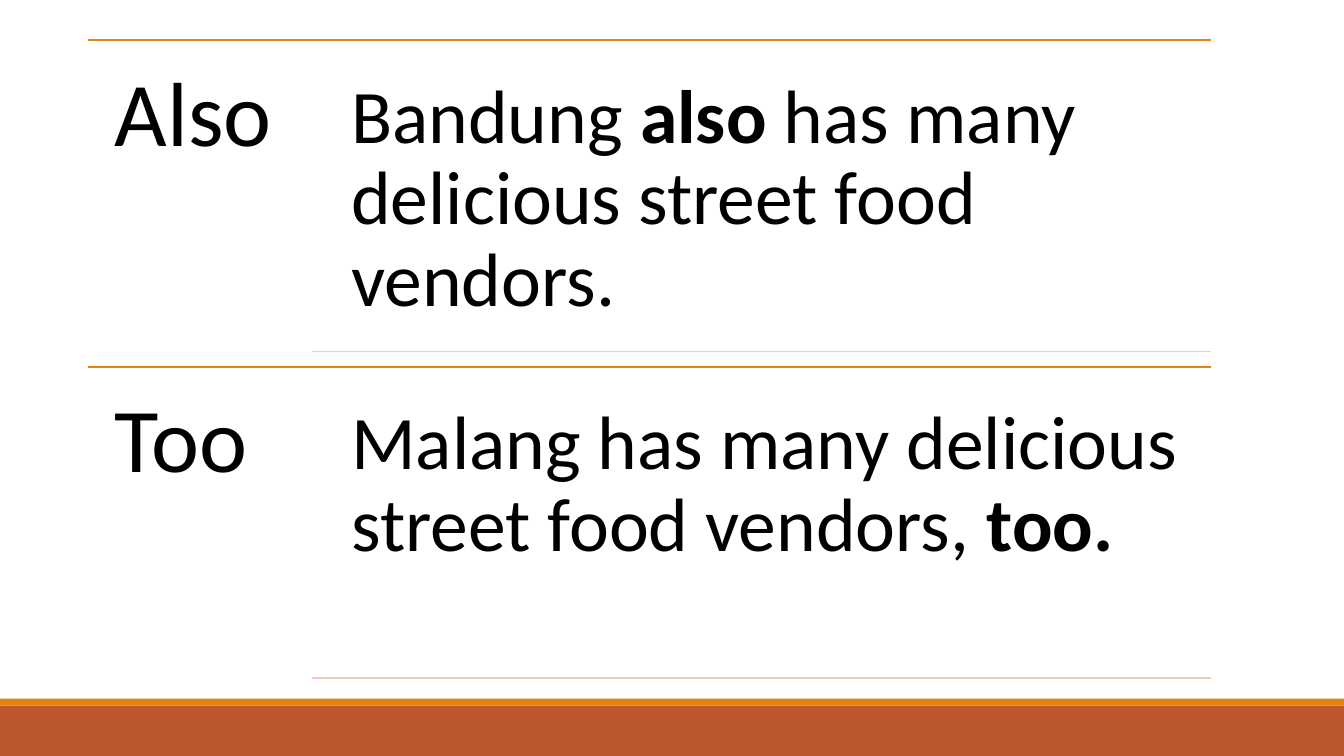
from dataclasses import dataclass

from lxml.etree import SubElement
from pptx import Presentation
from pptx.dml.color import RGBColor
from pptx.enum.shapes import MSO_CONNECTOR, MSO_SHAPE
from pptx.enum.text import MSO_ANCHOR
from pptx.oxml.ns import qn
from pptx.util import Pt


@dataclass(frozen=True)
class Theme:
    font: str = "Calibri"
    text: str = "000000"
    orange: str = "E48312"
    rust: str = "BD582C"
    pale: str = "F2CDBD"
    word_size: float = 65
    example_size: float = 54
    rule_width: float = 1.25


theme = Theme()


def add_rule(left, y, color):
    rule = slide.shapes.add_connector(
        MSO_CONNECTOR.STRAIGHT, Pt(left), Pt(y), Pt(rule_right), Pt(y))
    rule.line.color.rgb = RGBColor.from_string(color)
    rule.line.width = Pt(theme.rule_width)
    SubElement(rule._element.spPr, qn("a:effectLst"))


def add_text(left, top, width, height, inset, size, pieces):
    box = slide.shapes.add_textbox(Pt(left), Pt(top), Pt(width), Pt(height))
    frame = box.text_frame
    frame.word_wrap = True
    frame.vertical_anchor = MSO_ANCHOR.TOP
    frame.margin_left = frame.margin_right = Pt(inset)
    frame.margin_top = frame.margin_bottom = Pt(inset)
    paragraph = frame.paragraphs[0]
    paragraph.line_spacing = 0.9
    for text, bold in pieces:
        run = paragraph.add_run()
        run.text = text
        run.font.name = theme.font
        run.font.size = Pt(size)
        run.font.bold = bold
        run.font.color.rgb = RGBColor.from_string(theme.text)


presentation = Presentation()
presentation.slide_width = Pt(960)
presentation.slide_height = Pt(540)
slide = presentation.slides.add_slide(presentation.slide_layouts[6])

# Footer bands
for top, height, color in [(504, 36, theme.rust), (499, 5, theme.orange)]:
    band = slide.shapes.add_shape(
        MSO_SHAPE.RECTANGLE, Pt(0), Pt(top), Pt(960), Pt(height))
    band.shadow.inherit = False
    band.fill.solid()
    band.fill.fore_color.rgb = RGBColor.from_string(color)
    band.line.fill.background()

# Word rows: each word on the left, its example sentence on the right
first_top, row_height = 28.8, 233.3
word_left, word_width = 62.6, 160.6
example_left, example_gap, example_height = 234.7, 10.6, 211.7
rule_right = 864.7
rows = [
    ("Also", [("Bandung ", False), ("also ", True),
              ("has many delicious street food vendors.", False)]),
    ("Too", [("Malang has many delicious street food vendors, ", False),
             ("too.", True)]),
]
for index, (word, example) in enumerate(rows):
    top = first_top + index * row_height
    example_top = top + example_gap
    add_rule(word_left, top, theme.orange)
    add_text(word_left, top, word_width, row_height, 19.5,
             theme.word_size, [(word, False)])
    add_text(example_left, example_top, rule_right - example_left,
             example_height, 16.2, theme.example_size, example)
    add_rule(word_left + word_width, example_top + example_height, theme.pale)

presentation.save("out.pptx")
